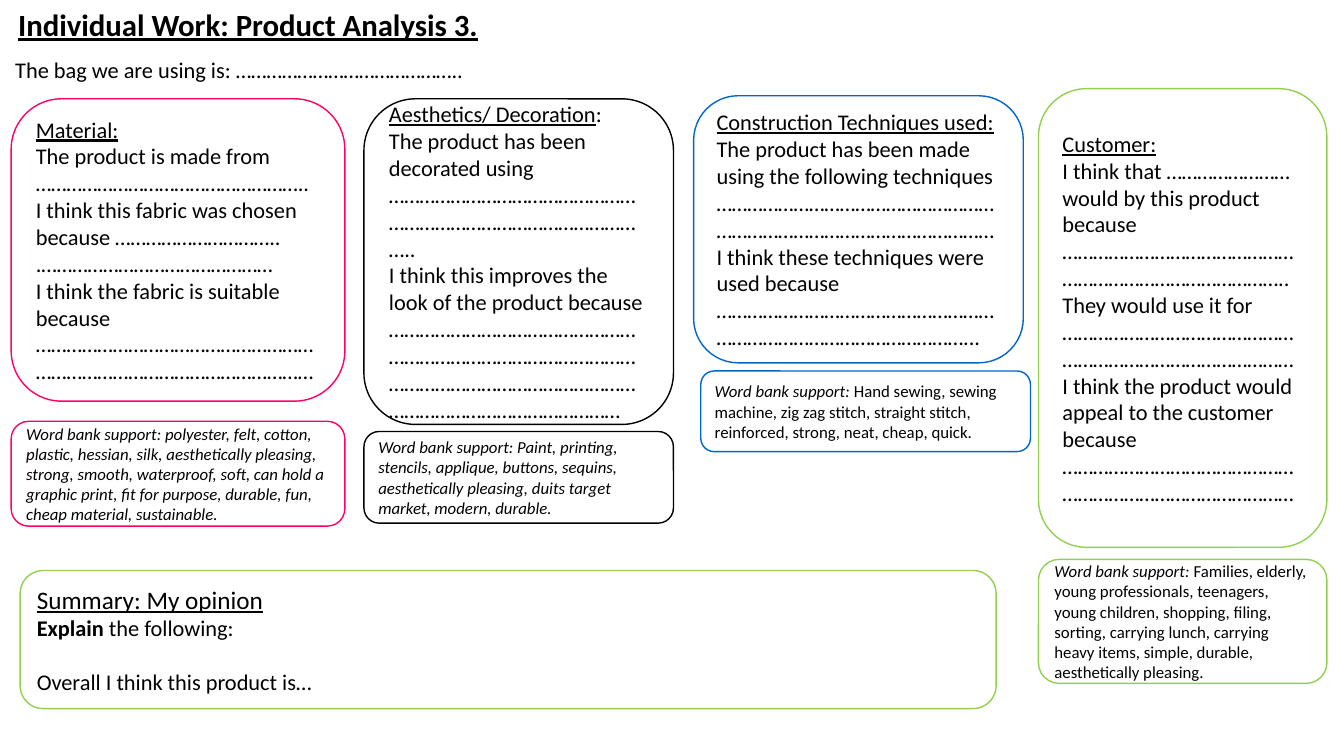
"""Build the product analysis worksheet slide."""
from lxml import etree
from pptx import Presentation, util as u
from pptx.dml.color import RGBColor
from pptx.enum import shapes, text
from pptx.oxml.ns import qn

deck = Presentation()
deck.slide_width, deck.slide_height = u.Inches(13.33), u.Inches(7.5)
slide = deck.slides.add_slide(deck.slide_layouts[5])


def area(x, y, w, h):
    """Turn percentages of the slide into lengths."""
    wide, high = deck.slide_width / 100, deck.slide_height / 100
    return [round(n) for n in (x * wide, y * high, w * wide, h * high)]


def write(shape, paras, size, anchor, align=text.PP_ALIGN.LEFT):
    """Fill a shape with paragraphs of (words, style letters) runs."""
    frame = shape.text_frame
    frame.word_wrap = True
    frame.auto_size = text.MSO_AUTO_SIZE.NONE
    frame.vertical_anchor = anchor
    for n, runs in enumerate(paras):
        para = frame.paragraphs[0] if n == 0 else frame.add_paragraph()
        para.alignment = align
        for words, style in runs:
            run = para.add_run()
            run.text = words
            font = run.font
            font.name, font.size = "Calibri", u.Pt(size)
            font.color.rgb = RGBColor.from_string("000000")
            font.bold, font.italic = "b" in style, "i" in style
            font.underline = "u" in style
    return frame


MID, TOP = text.MSO_ANCHOR.MIDDLE, text.MSO_ANCHOR.TOP
PINK, BLUE, BLACK, GREEN = "FF0066", "0066CC", "000000", "92D050"
bank = "Word bank support: "

cards = [
    (PINK, (0.83, 13.07, 24.83, 40), 16, [
        [("Material:", "u")],
        [("The product is made from ……………………………………………..", "")],
        [("I think this fabric was chosen because …………………………..\t.………………………………………", "")],
        [("I think the fabric is suitable because ………………………………………………………………………………………………", "")]]),
    (BLUE, (51.61, 12.67, 24.53, 35.33), 16, [
        [("Construction Techniques used:", "u")],
        [("The product has been made using the following techniques ………………………………………………………………………………………………", "")],
        [("I think these techniques were used because …………………………………………………………………………………………...", "")]]),
    (BLACK, (27.08, 13.07, 23.03, 43.07), 16, [
        [("Aesthetics/ Decoration", "u"), (":", "")],
        [("The product has been decorated using ………………………………………………………………………………………..", "")],
        [("I think this improves the look of the product because ………………………………………………………………………………………………………………………………………………………………………", "")]]),
    (GREEN, (77.27, 11.73, 21.46, 60.67), 16, [
        [("Customer:", "u")],
        [("I think that …………………… would by this product because ……………………………………………………………………………..", "")],
        [("They would use it for ………………………………………………………………………………", "")],
        [("I think the product would appeal to the customer because ………………………………………………………………………………", "")]]),
    (PINK, (0.83, 55.73, 24.83, 13.87), 12, [
        [(bank + "polyester, felt, cotton, plastic, hessian, silk, aesthetically pleasing, strong, smooth, waterproof, soft, can hold a graphic print, fit for purpose, durable, fun, cheap material, sustainable.", "i")]]),
    (BLACK, (27.08, 57.07, 23.03, 12.13), 12, [
        [(bank + "Paint, printing, stencils, applique, buttons, sequins, aesthetically pleasing, duits target market, modern, durable.", "i")]]),
    (BLUE, (52.14, 49.07, 24.53, 10.67), 12, [
        [(bank, "i"), ("Hand sewing, sewing machine, zig zag stitch, straight stitch, reinforced, strong, neat, cheap, quick.", "")]]),
    (GREEN, (1.5, 75.47, 72.62, 18.27), 16, [
        [("Summary: My opinion", "u")],
        [("Explain", "b"), (" the following:", "")],
        [("Overall I think this product is…", "")]]),
    (GREEN, (77.27, 74, 21.46, 16.4), 12, [
        [(bank, "i"), ("Families, elderly, young professionals, teenagers, young children, shopping, filing, sorting, carrying lunch, carrying heavy items, simple, durable, aesthetically pleasing.", "")]]),
]

for color, place, size, paras in cards:
    card = slide.shapes.add_shape(shapes.MSO_SHAPE.ROUNDED_RECTANGLE, *area(*place))
    card.shadow.inherit = False
    card.fill.solid()
    card.fill.fore_color.rgb = RGBColor.from_string("FFFFFF")
    card.line.color.rgb = RGBColor.from_string(color)
    card.line.width = u.Pt(1)
    frame = write(card, paras, size, MID)
    for para in frame.paragraphs:
        if "\t" in para.text:
            tabs = etree.SubElement(para._p.get_or_add_pPr(), qn("a:tabLst"))
            etree.SubElement(tabs, qn("a:tab"), pos=str(u.Inches(1.85)), algn="l")
        if para.text.startswith("Summary"):
            para.runs[0].font.size = u.Pt(18)
        if para.text.startswith("Overall"):
            para.space_before = u.Pt(19.5)

title = slide.shapes.title
title.left, title.top, title.width, title.height = area(-12.9, 0.27, 62.72, 9.47)
label = slide.shapes.add_textbox(*area(0.83, 6.93, 62.72, 9.47))
heads = [
    (title, "Individual Work: Product Analysis 3.", "bu", 22, text.PP_ALIGN.CENTER),
    (label, "The bag we are using is: ……………………………………..", "", 16, text.PP_ALIGN.LEFT),
]
for shape, words, style, size, align in heads:
    frame = write(shape, [[(words, style)]], size, TOP, align)
    frame.margin_left = frame.margin_right = u.Inches(0.04)
    frame.margin_top = frame.margin_bottom = u.Inches(0.04)

deck.save("out.pptx")
